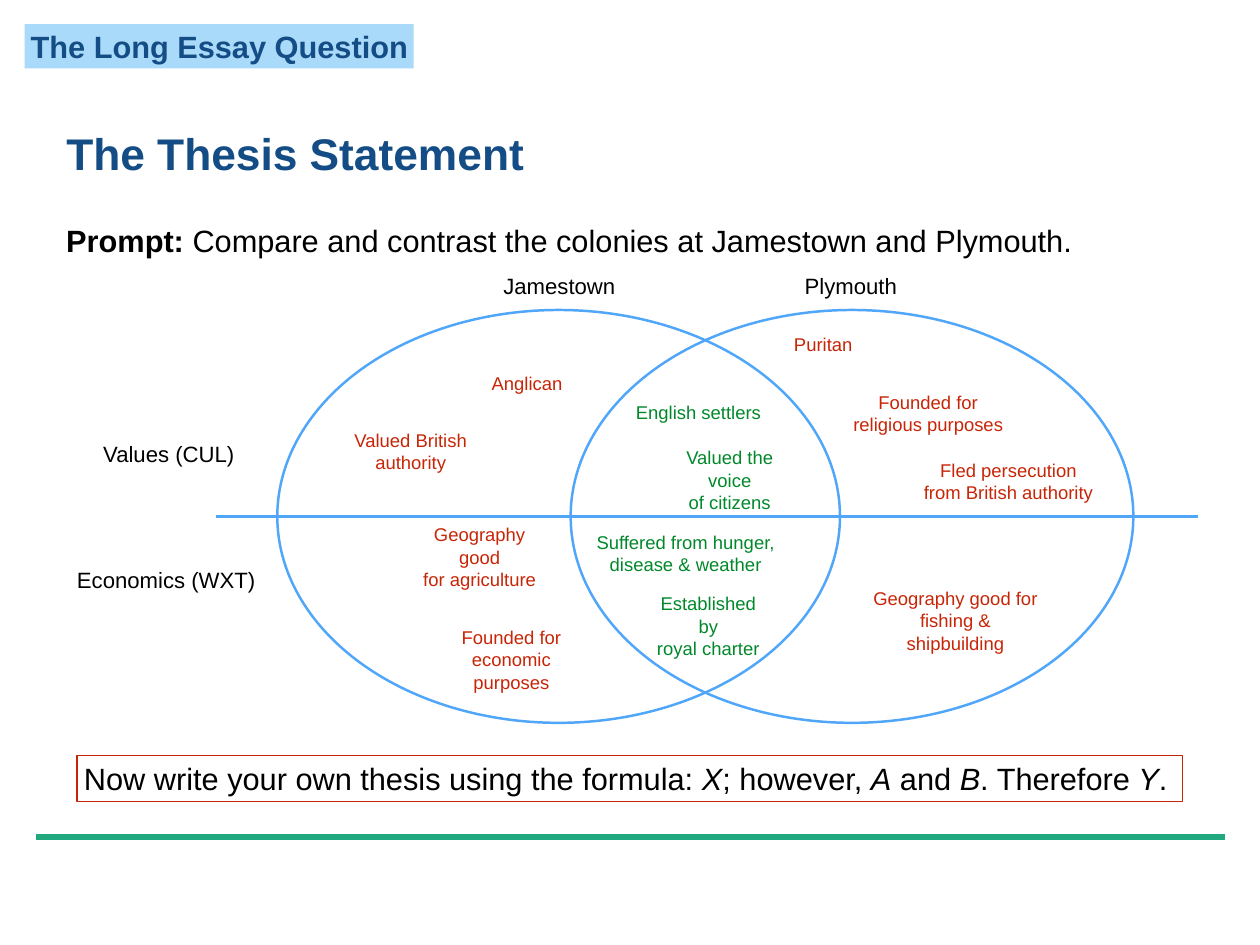
from pptx import Presentation
from pptx.dml.color import RGBColor
from pptx.enum.shapes import MSO_CONNECTOR as CONNECTOR, MSO_SHAPE as SHAPE
from pptx.enum.text import MSO_ANCHOR as ANCHOR, PP_ALIGN as ALIGN
from pptx.oxml.ns import qn
from pptx.util import Cm, Pt

FONT = "Arial"
NAVY, PALE_BLUE, BLUE = "144D85", "AADAF9", "50A7F9"
GREEN, RED, TEAL, BLACK = "00882B", "C82506", "21A87E", "000000"
INSET = 0.15

# Text, left, top and width in cm, measured from the corner of the Venn diagram
DIFFERENCES = [
    ("Anglican", 5.99, 1.68, 2.34),
    ("Valued British\vauthority", 2.06, 3.33, 3.53),
    ("Geography good\vfor agriculture", 3.68, 6.35, 4.24),
    ("Founded for\veconomic purposes", 4.27, 9.3, 4.88),
    ("Puritan", 14.66, 0.56, 1.98),
    ("Founded for\vreligious purposes", 16.36, 2.24, 4.6),
    ("Fled persecution\vfrom British authority", 18.37, 4.19, 5.18),
    ("Geography good for\vfishing & shipbuilding", 16.81, 8.18, 5.26),
]
SIMILARITIES = [
    ("English settlers", 10.13, 2.51, 3.89),
    ("Valued the voice\vof citizens", 10.92, 4.14, 4.1),
    ("Suffered from hunger,\vdisease & weather", 8.43, 6.25, 6.55),
    ("Established by\vroyal charter", 10.49, 8.33, 3.73),
]
COLONIES = [("Jamestown", 5.33, 5.51), ("Plymouth", 14, 4.88)]
THEMES = [("Values (CUL)", -6.02, 3.58, 5.82), ("Economics (WXT)", -6.17, 7.21, 5.97)]


def color(hex_string):
    return RGBColor.from_string(hex_string)


def write(shape, runs, size, text_color, align=ALIGN.CENTER, bold=None, wrap=True):
    """Fill a shape with one paragraph; runs are (text, style) pairs."""
    frame = shape.text_frame
    frame.word_wrap = wrap
    frame.vertical_anchor = ANCHOR.MIDDLE
    frame.margin_left = frame.margin_right = Cm(INSET)
    frame.margin_top = frame.margin_bottom = Cm(INSET)
    paragraph = frame.paragraphs[0]
    paragraph.alignment = align
    font = paragraph.font
    font.name, font.size, font.bold = FONT, Pt(size), bold
    font.color.rgb = color(text_color)
    for text, style in runs:
        if "\v" in text:
            paragraph.text = text
            continue
        run = paragraph.add_run()
        run.text = text
        if style:
            setattr(run.font, style, True)


def add_text(slide, box, runs, size, text_color, **options):
    textbox = slide.shapes.add_textbox(*map(Cm, box))
    write(textbox, runs, size, text_color, **options)


def add_outline(slide, kind, box, fill=None, line=None, width=1):
    shape = slide.shapes.add_shape(kind, *map(Cm, box))
    shape.shadow.inherit = False
    if fill:
        shape.fill.solid()
        shape.fill.fore_color.rgb = color(fill)
    else:
        shape.fill.background()
    if line:
        shape.line.color.rgb = color(line)
        shape.line.width = Pt(width)
    else:
        shape.line.fill.background()
    return shape


def add_rule(slide, left, right, y, line, width):
    rule = slide.shapes.add_connector(CONNECTOR.STRAIGHT, Cm(left), Cm(y), Cm(right), Cm(y))
    rule.line.color.rgb = color(line)
    rule.line.width = Pt(width)
    properties = rule._element.spPr
    properties.append(properties.makeelement(qn("a:effectLst"), {}))


def add_section_tag(slide, box):
    tag = add_outline(slide, SHAPE.RECTANGLE, box, fill=PALE_BLUE)
    write(tag, [("The Long Essay Question", None)], 25, NAVY, bold=True, wrap=False)


def place_title(slide, box):
    title = slide.shapes.title
    title.left, title.top, title.width, title.height = map(Cm, box)
    write(title, [("The Thesis Statement", None)], 36, NAVY, align=ALIGN.LEFT, bold=True)


def add_prompt(slide, box):
    prompt = [("Prompt: ", "bold"),
              ("Compare and contrast the colonies at Jamestown and Plymouth.", None)]
    add_text(slide, box, prompt, 25, BLACK, align=ALIGN.LEFT)


def add_venn(slide, box):
    left, top, width, height = box
    circle_width = 16.13
    for x in (left, left + width - circle_width):
        add_outline(slide, SHAPE.OVAL, (x, top, circle_width, height), line=BLUE, width=2)
    add_rule(slide, left - 1.75, left + width + 1.85, top + height / 2, BLUE, 2)

    for name, x, label_width in COLONIES:
        add_text(slide, (left + x, top - 1.7, label_width, 2), [(name, None)], 18, BLACK)
    for name, x, y, label_width in THEMES:
        add_text(slide, (left + x, top + y, label_width, 1.07), [(name, None)], 18, BLACK)
    for points, text_color in ((DIFFERENCES, RED), (SIMILARITIES, GREEN)):
        for text, x, y, label_width in points:
            label_height = 1.45 if "\v" in text else 0.86
            add_text(slide, (left + x, top + y, label_width, label_height),
                     [(text, None)], 15, text_color, wrap=False)


def add_task(slide, box):
    task = add_outline(slide, SHAPE.RECTANGLE, box, line=RED)
    formula = [("Now write your own thesis using the formula: ", None), ("X", "italic"),
               ("; however, ", None), ("A", "italic"), (" and ", None), ("B", "italic"),
               (". Therefore ", None), ("Y", "italic"), (". ", None)]
    write(task, formula, 25, BLACK)


def main():
    presentation = Presentation()
    presentation.slide_width, presentation.slide_height = Cm(36.12), Cm(27.1)
    slide = presentation.slides.add_slide(presentation.slide_layouts[5])
    add_section_tag(slide, (0.71, 0.69, 11.15, 1.27))
    add_rule(slide, 1.02, 35.13, 24, TEAL, 5)
    place_title(slide, (1.75, 3.53, 13.44, 1.73))
    add_prompt(slide, (1.75, 6.25, 31.57, 1.27))
    add_venn(slide, (7.95, 8.89, 24.54, 11.84))
    add_task(slide, (2.21, 21.67, 31.7, 1.32))
    presentation.save("out.pptx")


if __name__ == "__main__":
    main()
